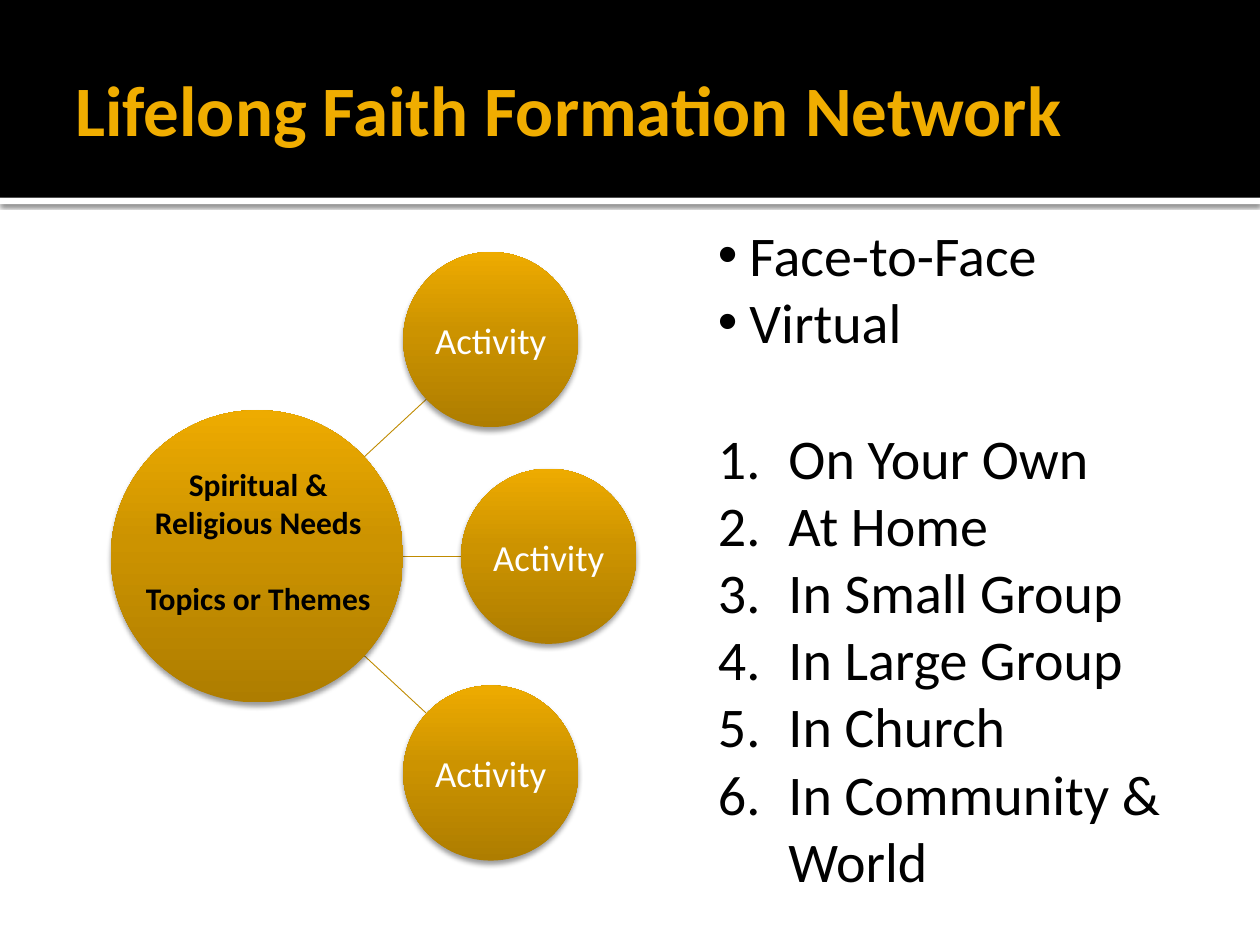
from dataclasses import dataclass
import math

from lxml import etree
from pptx import Presentation
from pptx import util as u
from pptx.dml import color
from pptx.enum import shapes, text
from pptx.oxml import ns


@dataclass(frozen=True)
class Theme:
    font: str = "Calibri"
    black: str = "000000"
    white: str = "FFFFFF"
    gold: str = "F0AD00"
    line: str = "C08B00"
    gradient: tuple = ((0, "AE7D00"), (55, "CC9300"), (100, "EEAB00"))
    band_shadow: tuple = (60, 2.5, 0.8)
    circle_shadow: tuple = (38, 3.1, 2)
    title_size: float = 40.5
    list_size: float = 32
    activity_size: float = 21
    hub_size: float = 18
    line_height: float = 1.22


def add_element(parent, tag, **attributes):
    element = etree.SubElement(parent, ns.qn(tag))
    for name, value in attributes.items():
        element.set(name, str(value))
    return element


class NetworkSlide:
    """Draws one slide on a grid of 20 columns by 15 rows."""

    def __init__(self, presentation, theme):
        self.theme = theme
        self.column = presentation.slide_width / 20
        self.row = presentation.slide_height / 15
        self.slide = presentation.slides.add_slide(presentation.slide_layouts[6])

    def place(self, left, top, width, height):
        return (round(left * self.column), round(top * self.row),
                round(width * self.column), round(height * self.row))

    def shadow(self, shape, opacity, blur, distance):
        effects = shape._element.spPr.find(ns.qn("a:effectLst"))
        outer = add_element(effects, "a:outerShdw", blurRad=u.Pt(blur),
                            dist=u.Pt(distance), dir=90 * 60000, rotWithShape=0)
        shade = add_element(outer, "a:srgbClr", val=self.theme.black)
        add_element(shade, "a:alpha", val=opacity * 1000)

    def shape(self, kind, box):
        shape = self.slide.shapes.add_shape(kind, *self.place(*box))
        shape.shadow.inherit = False
        shape.line.fill.background()
        return shape

    def band(self, top, height, fill, shadow=None):
        shape = self.shape(shapes.MSO_SHAPE.RECTANGLE, (0, top, 20, height))
        shape.fill.solid()
        shape.fill.fore_color.rgb = color.RGBColor.from_string(fill)
        if shadow:
            self.shadow(shape, *shadow)

    def circle(self, center, radius, label=None):
        x, y = center
        shape = self.shape(shapes.MSO_SHAPE.OVAL,
                           (x - radius, y - radius, 2 * radius, 2 * radius))
        shape.fill.gradient()
        gradient = shape._element.spPr.find(ns.qn("a:gradFill"))
        for child in list(gradient):
            gradient.remove(child)
        stops = add_element(gradient, "a:gsLst")
        for position, shade in self.theme.gradient:
            stop = add_element(stops, "a:gs", pos=position * 1000)
            add_element(stop, "a:srgbClr", val=shade)
        add_element(gradient, "a:lin", ang=270 * 60000, scaled=0)
        self.shadow(shape, *self.theme.circle_shadow)
        if label:
            self.set_text(shape.text_frame, [label], self.theme.activity_size,
                          self.theme.white, margins=(0.01,) * 4,
                          anchor=text.MSO_ANCHOR.MIDDLE, align=text.PP_ALIGN.CENTER)

    def spoke(self, hub, hub_inset, center, radius):
        length = math.dist(hub, center)
        start, end = hub_inset / length, 1 - radius / length
        ends = [tuple(a + (b - a) * share for a, b in zip(hub, center))
                for share in (start, end)]
        points = [round(value) for x, y in ends
                  for value in (x * self.column, y * self.row)]
        connector = self.slide.shapes.add_connector(
            shapes.MSO_CONNECTOR.STRAIGHT, *points)
        connector.line.color.rgb = color.RGBColor.from_string(self.theme.line)
        connector.line.width = u.Pt(0.5)
        add_element(connector._element.spPr, "a:effectLst")

    def set_text(self, frame, lines, size, shade, bold=False,
                 margins=(0.1, 0.05, 0.1, 0.05),
                 anchor=text.MSO_ANCHOR.TOP, align=text.PP_ALIGN.LEFT):
        frame.word_wrap = True
        frame.vertical_anchor = anchor
        (frame.margin_left, frame.margin_top,
         frame.margin_right, frame.margin_bottom) = map(u.Inches, margins)
        frame.text = "\n".join(lines)
        for paragraph in frame.paragraphs:
            paragraph.alignment = align
            for run in paragraph.runs:
                run.font.name = self.theme.font
                run.font.size = u.Pt(size)
                run.font.bold = bold
                run.font.color.rgb = color.RGBColor.from_string(shade)
        return frame.paragraphs

    def text(self, box, lines, size, shade, **style):
        shape = self.slide.shapes.add_textbox(*self.place(*box))
        return self.set_text(shape.text_frame, lines, size, shade, **style)

    def skip_line(self, paragraph, size):
        paragraph.space_before = u.Pt(round(size * self.theme.line_height))

    def bullet(self, paragraph, indent, tag, **mark):
        properties = paragraph._p.get_or_add_pPr()
        properties.set("marL", str(u.Inches(indent)))
        properties.set("indent", str(-u.Inches(indent)))
        add_element(properties, "a:buFont", typeface="Arial")
        add_element(properties, tag, **mark)

    def lists(self, box, bullets, numbers):
        size = self.theme.list_size
        paragraphs = self.text(box, bullets + numbers, size, self.theme.black)
        split = len(bullets)
        self.skip_line(paragraphs[split], size)
        for paragraph in paragraphs[:split]:
            self.bullet(paragraph, 0.25, "a:buChar", char="•")
        for paragraph in paragraphs[split:]:
            self.bullet(paragraph, 0.56, "a:buAutoNum", type="arabicPeriod")


def main():
    presentation = Presentation()
    presentation.slide_width = u.Inches(10)
    presentation.slide_height = u.Inches(7.5)
    theme = Theme()
    slide = NetworkSlide(presentation, theme)

    slide.band(3.14, 0.1, theme.white, theme.band_shadow)
    slide.band(0, 3.14, theme.black)
    slide.text((1, 0.34, 18, 2.74), ["Lifelong Faith Formation Network"],
               theme.title_size, theme.gold, bold=True,
               margins=(0.1, 0.05, 0.05, 0.05), anchor=text.MSO_ANCHOR.MIDDLE)

    hub, hub_radius, radius, step = (4.08, 8.83), 2.32, 1.39, 3.44
    centers = [(x, hub[1] + turn * step)
               for turn, x in ((-1, 7.79), (0, 8.71), (1, 7.79))]
    for center in centers:
        slide.spoke(hub, hub_radius - 0.12, center, radius)
    slide.circle(hub, hub_radius)
    for center in centers:
        slide.circle(center, radius, "Activity")

    slide.lists((11.2, 3.4, 8.14, 10.98),
                ["Face-to-Face", "Virtual"],
                ["On Your Own", "At Home", "In Small Group", "In Large Group",
                 "In Church", "In Community & World"])
    needs, topics = slide.text(
        (2.1, 7.28, 4, 3.24),
        ["Spiritual & Religious Needs", "Topics or Themes"],
        theme.hub_size, theme.black, bold=True, align=text.PP_ALIGN.CENTER)
    slide.skip_line(topics, theme.hub_size)

    presentation.save("out.pptx")


if __name__ == "__main__":
    main()
